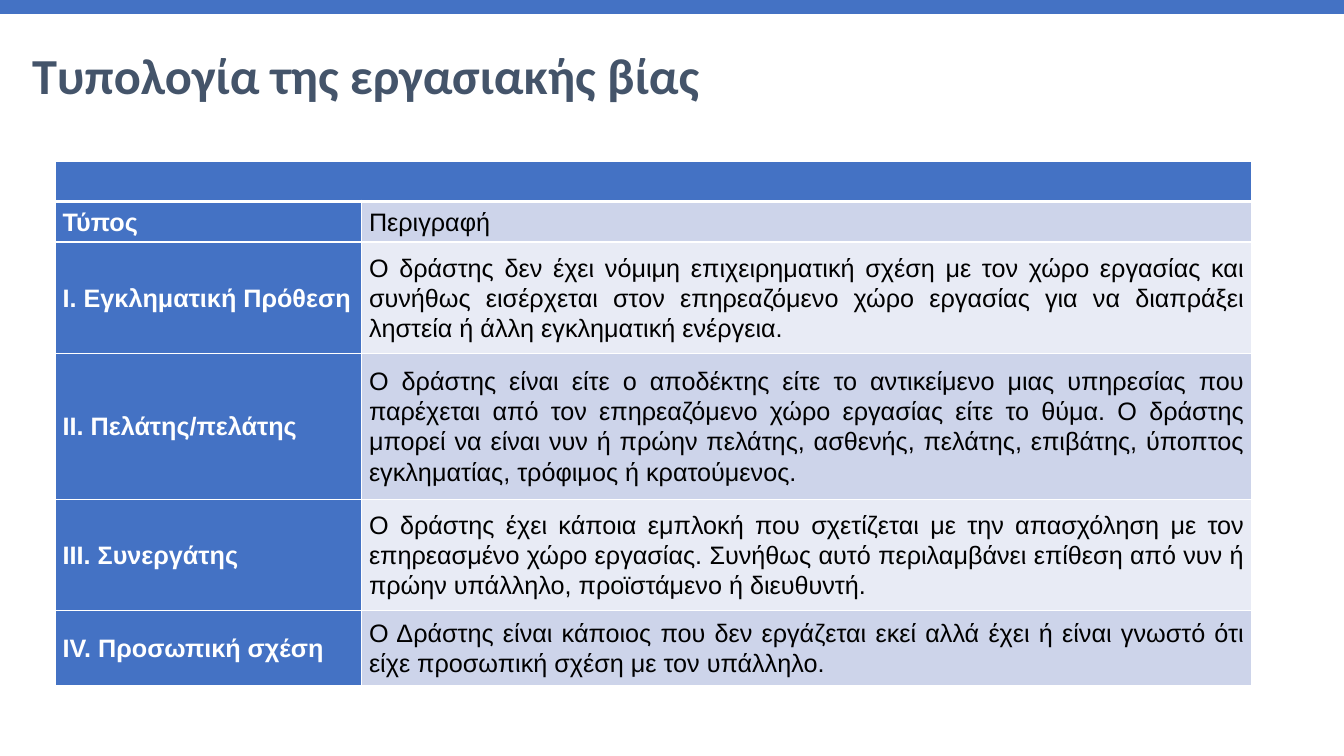
import pptx
import pptx.dml.color
import pptx.enum.shapes
import pptx.enum.text
import pptx.oxml
import pptx.oxml.ns
import pptx.util
from pptx.util import Cm

BLUE, SLATE, WHITE, BLACK = "4472C4", "44546A", "FFFFFF", "000000"
BANDS = ("E8EBF5", "CDD4EA")
SLIDE_WIDTH, SLIDE_HEIGHT = 33.87, 19.05

COLUMN_WIDTHS = (7.72, 22.42)
ROW_HEIGHTS = (1.02, 1.02, 2.8, 3.68, 2.8, 1.9)
VIOLENCE_TYPES = (
    ("Τύπος", "Περιγραφή"),
    ("Ι. Εγκληματική Πρόθεση",
     "Ο δράστης δεν έχει νόμιμη επιχειρηματική σχέση με τον χώρο εργασίας και "
     "συνήθως εισέρχεται στον επηρεαζόμενο χώρο εργασίας για να διαπράξει "
     "ληστεία ή άλλη εγκληματική ενέργεια."),
    ("II. Πελάτης/πελάτης",
     "Ο δράστης είναι είτε ο αποδέκτης είτε το αντικείμενο μιας υπηρεσίας που "
     "παρέχεται από τον επηρεαζόμενο χώρο εργασίας είτε το θύμα. Ο δράστης "
     "μπορεί να είναι νυν ή πρώην πελάτης, ασθενής, πελάτης, επιβάτης, ύποπτος "
     "εγκληματίας, τρόφιμος ή κρατούμενος."),
    ("III. Συνεργάτης",
     "Ο δράστης έχει κάποια εμπλοκή που σχετίζεται με την απασχόληση με τον "
     "επηρεασμένο χώρο εργασίας. Συνήθως αυτό περιλαμβάνει επίθεση από νυν ή "
     "πρώην υπάλληλο, προϊστάμενο ή διευθυντή."),
    ("IV. Προσωπική σχέση",
     "Ο Δράστης είναι κάποιος που δεν εργάζεται εκεί αλλά έχει ή είναι γνωστό ότι "
     "είχε προσωπική σχέση με τον υπάλληλο."),
)


def color(hex_code):
    return pptx.dml.color.RGBColor.from_string(hex_code)


class SlideBuilder:
    heading_font, body_font = "Calibri", "Arial"
    heading_size, body_size = 36, 18

    def __init__(self, slide):
        self.slide = slide

    def styled_run(self, paragraph, text, font, size, ink, bold):
        run = paragraph.add_run()
        run.text = text
        run.font.name = font
        run.font.size = pptx.util.Pt(size)
        run.font.bold = bold
        run.font.color.rgb = color(ink)

    def bar(self, left, top, width, height):
        band = self.slide.shapes.add_shape(
            pptx.enum.shapes.MSO_SHAPE.RECTANGLE,
            Cm(left), Cm(top), Cm(width), Cm(height))
        band.shadow.inherit = False
        band.fill.solid()
        band.fill.fore_color.rgb = color(BLUE)
        band.line.fill.background()

    def title(self, text, left, top, width, height):
        frame = self.slide.shapes.add_textbox(
            Cm(left), Cm(top), Cm(width), Cm(height)).text_frame
        frame.word_wrap = True
        frame.vertical_anchor = pptx.enum.text.MSO_ANCHOR.BOTTOM
        paragraph = frame.paragraphs[0]
        paragraph.line_spacing = 0.9
        self.styled_run(paragraph, text, self.heading_font, self.heading_size, SLATE, True)

    def style_cell(self, cell, fill, top=1, bottom=1):
        """Fill the cell and give it white borders; top and bottom are in points."""
        cell.fill.solid()
        cell.fill.fore_color.rgb = color(fill)
        properties = cell._tc.get_or_add_tcPr()
        sides = (("L", 1), ("R", 1), ("T", top), ("B", bottom))
        for position, (side, points) in enumerate(sides):
            properties.insert(position, pptx.oxml.parse_xml(
                f'<a:ln{side} {pptx.oxml.ns.nsdecls("a")} w="{pptx.util.Pt(points)}">'
                f'<a:solidFill><a:srgbClr val="{WHITE}"/></a:solidFill></a:ln{side}>'))

    def cell_text(self, cell, text, ink, bold):
        cell.vertical_anchor = pptx.enum.text.MSO_ANCHOR.MIDDLE
        cell.margin_left = cell.margin_right = Cm(0.18)
        cell.margin_top = cell.margin_bottom = 0
        paragraph = cell.text_frame.paragraphs[0]
        paragraph.alignment = pptx.enum.text.PP_ALIGN.JUSTIFY
        paragraph.line_spacing = 1.07
        self.styled_run(paragraph, text, self.body_font, self.body_size, ink, bold)

    def typology(self, left, top):
        table = self.slide.shapes.add_table(
            len(ROW_HEIGHTS), len(COLUMN_WIDTHS), Cm(left), Cm(top),
            Cm(sum(COLUMN_WIDTHS)), Cm(sum(ROW_HEIGHTS))).table
        for column, width in zip(table.columns, COLUMN_WIDTHS):
            column.width = Cm(width)
        for row, height in zip(table.rows, ROW_HEIGHTS):
            row.height = Cm(height)
        for column in range(len(COLUMN_WIDTHS)):
            self.style_cell(table.cell(0, column), BLUE, bottom=3)
        table.cell(0, 0).merge(table.cell(0, 1))
        for index, (kind, description) in enumerate(VIOLENCE_TYPES, start=1):
            top_border = 3 if index == 1 else 1
            kind_cell, description_cell = table.cell(index, 0), table.cell(index, 1)
            self.style_cell(kind_cell, BLUE, top=top_border)
            self.cell_text(kind_cell, kind, WHITE, True)
            self.style_cell(description_cell, BANDS[index % 2], top=top_border)
            self.cell_text(description_cell, description, BLACK, False)


def main():
    deck = pptx.Presentation()
    deck.slide_width, deck.slide_height = Cm(SLIDE_WIDTH), Cm(SLIDE_HEIGHT)
    builder = SlideBuilder(deck.slides.add_slide(deck.slide_layouts[6]))
    builder.title("Τυπολογία της εργασιακής βίας", 0.56, 0.81, 30.99, 1.98)
    builder.bar(0, 0, SLIDE_WIDTH, 0.35)
    builder.typology(1.4, 4.06)
    deck.save("out.pptx")


if __name__ == "__main__":
    main()
